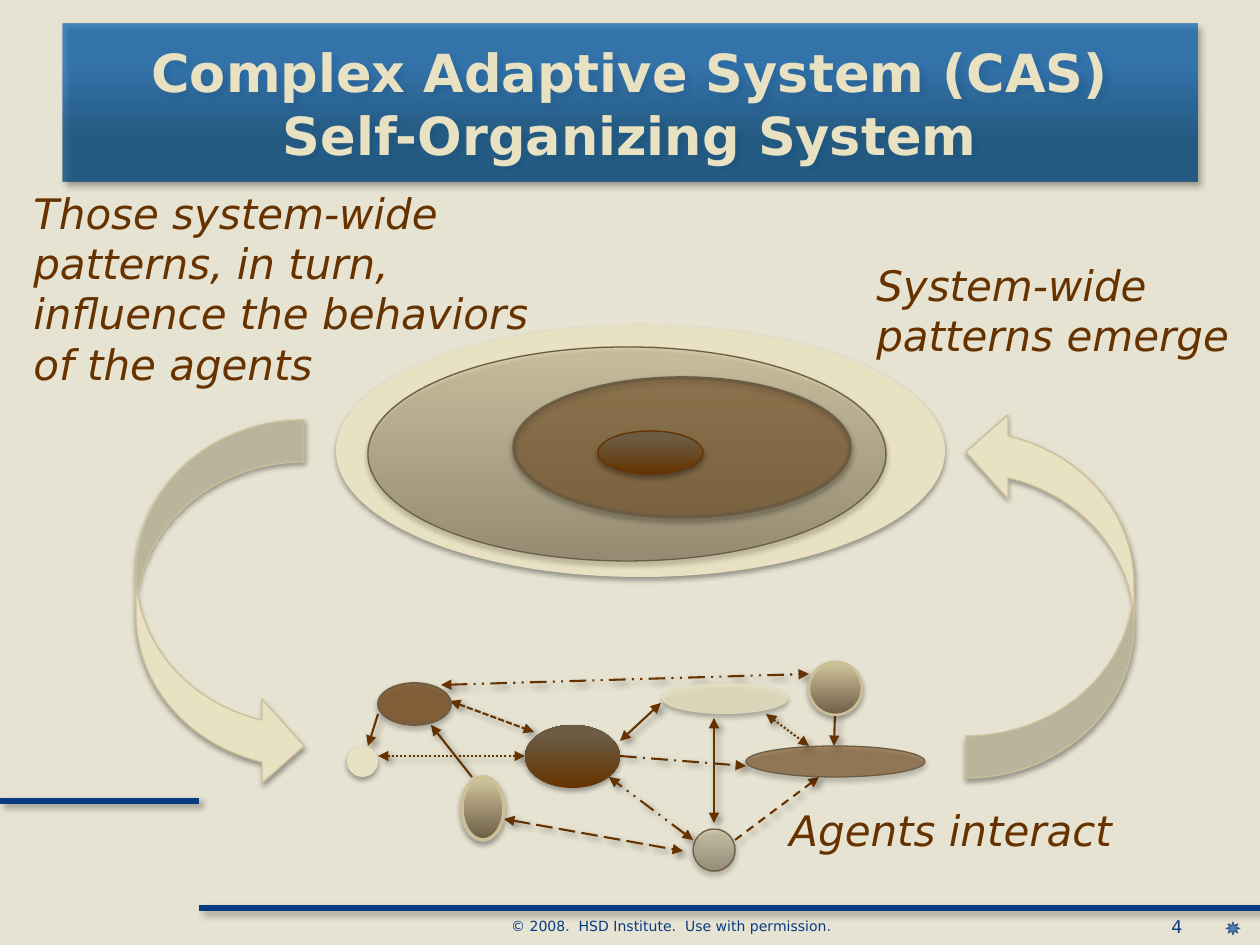
from lxml.etree import SubElement
from pptx import Presentation
from pptx.dml.color import RGBColor
from pptx.enum.dml import MSO_LINE as Dash
from pptx.enum.shapes import MSO_CONNECTOR, MSO_SHAPE as Kind
from pptx.enum.text import MSO_ANCHOR, PP_ALIGN as Align
from pptx.oxml.ns import qn
from pptx.util import Pt

FONT = "DejaVu Sans"
PAPER = RGBColor(0xE6, 0xE3, 0xD2)
CREAM = RGBColor(0xE8, 0xE1, 0xC2)
SAND = RGBColor(0xCC, 0xC0, 0x99)
EARTH = RGBColor(0x6C, 0x5C, 0x44)
BROWN = RGBColor(0x66, 0x33, 0x00)
ICE = RGBColor(0xE1, 0xE8, 0xF5)
NAVY = RGBColor(0x08, 0x3A, 0x81)
DEEP = RGBColor(0x00, 0x47, 0x7F)
AZURE = RGBColor(0x00, 0x5D, 0xB3)
SKY = RGBColor(0x4F, 0x81, 0xBD)
STEEL = RGBColor(0x3A, 0x5F, 0x8C)

# Fills: stops of (position %, colour, opacity %), from the bottom up
BANNER = [(31, DEEP, 76), (74, AZURE, 68)]
DARK = [(0, BROWN, 100), (84, EARTH, 100)]
LIGHT = [(0, EARTH, 100), (94, SAND, 100)]
HAZE = [(0, EARTH, 50), (94, SAND, 50)]
PEARL = HAZE + [(100, ICE, 100)]


def flat(color, alpha=100):
    return [(0, color, alpha)]


# Shadows: opacity %, blur pt, distance pt, direction in degrees
SLANT = (40, 4, 3, 45)
DROP = (35, 3.1, 1.8, 90)

TITLE = "Complex Adaptive System (CAS)\nSelf-Organizing System"

# box, text, size, colour, italic, alignment
TEXTS = [
    ((903, 910, 292, 34), "4", 10, NAVY, False, Align.RIGHT),
    ((199, 911, 945, 30), "© 2008.  HSD Institute.  Use with permission.",
     8, NAVY, False, Align.CENTER),
    ((864, 253, 388, 136), "System-wide patterns emerge",
     24, BROWN, True, Align.LEFT),
    ((777, 798, 420, 95), "Agents interact", 24, BROWN, True, Align.LEFT),
    ((21, 181, 557, 242), "Those system-wide patterns, in turn, influence "
     "the behaviors of the agents", 24, BROWN, True, Align.LEFT),
]

RULES = [(0, 801, 199, 801), (199, 908, 1260, 908)]

# box, turn in degrees
LOOPS = [((136, 420, 168, 368), 0), ((966, 410, 168, 368), 180)]

# box, fill, line colour, line width
PATTERNS = [
    ((336, 325, 609, 252), flat(CREAM), None, 0),
    ((368, 347, 518, 214), HAZE, EARTH, 0.75),
    ((514, 378, 336, 139), flat(BROWN, 40), EARTH, 2),
    ((598, 431, 105, 43), DARK, BROWN, 0.75),
]
AGENTS = [
    ((347, 746, 31, 31), flat(CREAM), None, 0),
    ((378, 683, 73, 42), flat(BROWN, 65), EARTH, 1),
    ((462, 777, 42, 63), LIGHT, SAND, 2),
    ((525, 725, 95, 63), DARK, None, 0),
    ((662, 683, 126, 31), flat(CREAM, 80), None, 0),
    ((746, 746, 179, 31), flat(BROWN, 50), EARTH, 0.75),
    ((693, 829, 42, 42), PEARL, EARTH, 0.75),
    ((809, 662, 53, 53), LIGHT, SAND, 1.5),
]

# ends, dash, arrowheads
ONE, BOTH = ("tailEnd",), ("headEnd", "tailEnd")
LINKS = [
    ((472, 777, 431, 725), None, ONE),
    ((378, 714, 368, 746), None, ONE),
    ((504, 819, 683, 851), Dash.LONG_DASH, BOTH),
    ((766, 714, 809, 746), Dash.ROUND_DOT, BOTH),
    ((450, 701, 534, 732), Dash.SQUARE_DOT, BOTH),
    ((620, 756, 746, 766), Dash.LONG_DASH_DOT, ONE),
    ((714, 823, 714, 718), None, BOTH),
    ((735, 840, 819, 777), Dash.DASH, ONE),
    ((620, 741, 661, 703), None, BOTH),
    ((835, 714, 834, 746), None, ONE),
    ((693, 840, 609, 777), Dash.DASH_DOT_DOT, BOTH),
    ((378, 756, 525, 756), Dash.ROUND_DOT, BOTH),
    ((441, 685, 809, 674), Dash.DASH_DOT_DOT, BOTH),
]

SCALE = 914400 / 126


def emu(nums):
    return [round(n * SCALE) for n in nums]


def tint(node, color, alpha):
    clr = SubElement(node, qn("a:srgbClr"), val=str(color))
    if alpha < 100:
        SubElement(clr, qn("a:alpha"), val=str(alpha * 1000))


def paint(shape, stops):
    """Fill with one colour, or with a gradient that runs upward."""
    fill, props = shape.fill, shape.element.spPr
    if len(stops) == 1:
        fill.solid()
        fill.fore_color.rgb = stops[0][1]
        node = props.find(qn("a:solidFill"))
        node.clear()
        tint(node, *stops[0][1:])
        return
    fill.gradient()
    fill.gradient_angle = 90
    items = props.find(qn("a:gradFill")).find(qn("a:gsLst"))
    items.clear()
    for pos, color, alpha in stops:
        tint(SubElement(items, qn("a:gs"), pos=str(pos * 1000)), color, alpha)


def shade(shape, shadow):
    """Add the shadow; the line must be set before."""
    alpha, blur, dist, angle = shadow
    effects = SubElement(shape.element.spPr, qn("a:effectLst"))
    outer = SubElement(effects, qn("a:outerShdw"), blurRad=str(int(Pt(blur))),
                       dist=str(int(Pt(dist))), dir=str(angle * 60000),
                       rotWithShape="0")
    tint(outer, RGBColor(0, 0, 0), alpha)


def draw(kind, box, stops, color=None, width=0, shadow=DROP):
    shape = slide.shapes.add_shape(kind, *emu(box))
    paint(shape, stops)
    if color is None:
        shape.line.fill.background()
    else:
        shape.line.color.rgb = color
        shape.line.width = Pt(width)
    if shadow:
        shade(shape, shadow)
    else:
        shape.shadow.inherit = False
    return shape


def join(ends, color, width, dash=None, heads=()):
    link = slide.shapes.add_connector(MSO_CONNECTOR.STRAIGHT, *emu(ends))
    link.line.color.rgb = color
    link.line.width = Pt(width)
    if dash is not None:
        link.line.dash_style = dash
    for head in heads:
        SubElement(link.element.spPr.find(qn("a:ln")), qn("a:" + head),
                   type="triangle")
    shade(link, SLANT)


def write(shape, text, size, color, align, bold=False, italic=False):
    shape.text_frame.word_wrap = True
    para = shape.text_frame.paragraphs[0]
    para.text = text
    para.alignment = align
    font = para.font
    font.name, font.size, font.color.rgb = FONT, Pt(size), color
    font.bold, font.italic = bold, italic


deck = Presentation()
deck.slide_width, deck.slide_height = emu((1260, 945))
slide = deck.slides.add_slide(deck.slide_layouts[6])
slide.background.fill.solid()
slide.background.fill.fore_color.rgb = PAPER

for ends in RULES:
    join(ends, NAVY, 3)

banner = draw(Kind.RECTANGLE, (63, 24, 1134, 158), BANNER, shadow=SLANT)
banner.text_frame.vertical_anchor = MSO_ANCHOR.MIDDLE
write(banner, TITLE, 30, CREAM, Align.CENTER, bold=True)

for box, turn in LOOPS:
    loop = draw(Kind.CURVED_RIGHT_ARROW, box, flat(CREAM), SAND, 0.75)
    loop.rotation = turn
for oval in PATTERNS:
    draw(Kind.OVAL, *oval)
for ends, dash, heads in LINKS:
    join(ends, BROWN, 1.2, dash, heads)
for oval in AGENTS:
    draw(Kind.OVAL, *oval)
for box, text, size, color, italic, align in TEXTS:
    write(slide.shapes.add_textbox(*emu(box)), text, size, color, align,
          italic=italic)
draw(Kind.SUN, (1226, 922, 14, 13), flat(SKY), STEEL, 0.5, shadow=None)

deck.save("out.pptx")
